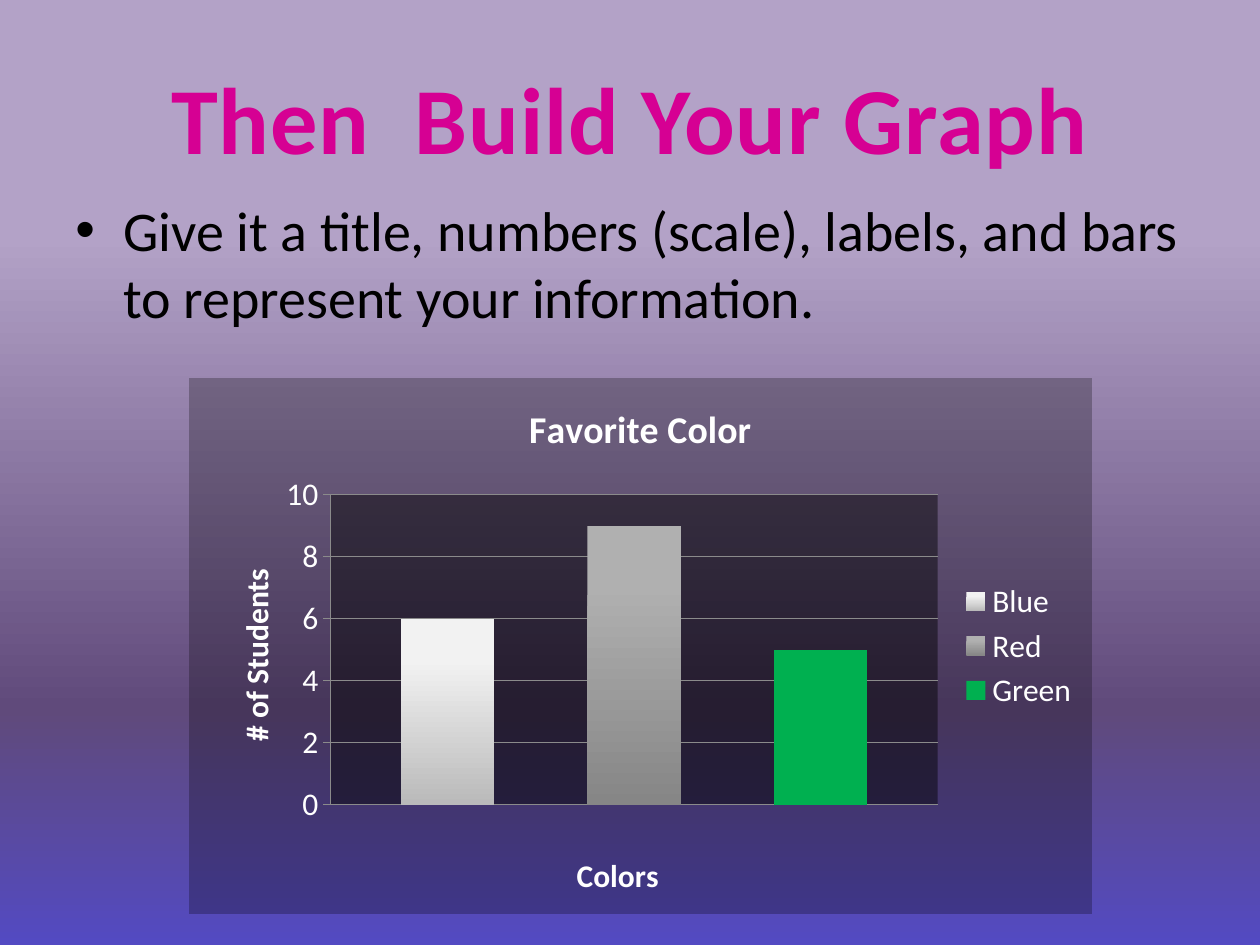
from dataclasses import dataclass

from lxml import etree
from pptx import Presentation
from pptx import util as u
from pptx.chart import data as chart_data
from pptx.dml import color, fill as dml_fill
from pptx.enum import chart as ce, text
from pptx.oxml import ns, parse_xml

PX = 914400 / 126
FONT = "Calibri"
COLORS = {
    "title": "D60093",
    "body": "000000",
    "panel": "000000",
    "label": "FFFFFF",
    "grid": "8B8B8B",
}


@dataclass(frozen=True)
class Box:
    x: int
    y: int
    w: int = 0
    h: int = 0

    def emu(self) -> list[int]:
        return [round(v * PX) for v in (self.x, self.y, self.w, self.h)]


@dataclass(frozen=True)
class Bar:
    name: str
    value: int
    stops: tuple[tuple[int, str], ...]


SKY = ((0, "B3A2C7"), (25, "B3A2C7"), (75, "604A7B"), (100, "534AC2"))
BARS = [
    Bar("Blue", 6, ((0, "F2F2F2"), (25, "F0F0F0"), (100, "BABABA"))),
    Bar("Red", 9, ((0, "B0B0B0"), (25, "AEAEAE"), (100, "868686"))),
    Bar("Green", 5, ((0, "00B050"),)),
]
TITLE = Box(63, 38, 1134, 158)
BODY = Box(63, 189, 1134, 655)
CHART = Box(189, 378, 903, 536)
PLOT = Box(331, 495, 607, 310)
VALUE_TITLE = Box(229, 563)
CATEGORY_TITLE = Box(571, 848)


def rgb(value: str) -> color.RGBColor:
    return color.RGBColor.from_string(value)


def style(font, size: float, value: str, bold: bool = False) -> None:
    font.name, font.size, font.bold = FONT, u.Pt(size), bold
    font.color.rgb = rgb(value)


def paint(fill: dml_fill.FillFormat, holder, stops) -> None:
    if len(stops) == 1:
        fill.solid()
        fill.fore_color.rgb = rgb(stops[0][1])
        return
    fill.gradient()
    fill.gradient_angle = 270
    gradient = holder.find(".//" + ns.qn("a:gsLst"))
    for old in list(gradient):
        gradient.remove(old)
    for position, value in stops:
        stop = etree.SubElement(gradient, ns.qn("a:gs"), pos=str(position * 1000))
        etree.SubElement(stop, ns.qn("a:srgbClr"), val=value)


def panel(opacity: int):
    return parse_xml(
        f'<c:spPr {ns.nsdecls("c", "a")}><a:solidFill><a:srgbClr val="{COLORS["panel"]}">'
        f'<a:alpha val="{opacity * 1000}"/></a:srgbClr></a:solidFill>'
        "<a:ln><a:noFill/></a:ln></c:spPr>"
    )


def place(parent, box: Box, index: int) -> None:
    old = parent.find(ns.qn("c:layout"))
    if old is not None:
        parent.remove(old)
    layout = etree.Element(ns.qn("c:layout"))
    manual = etree.SubElement(layout, ns.qn("c:manualLayout"))
    values = {"xMode": "edge", "yMode": "edge"}
    if box.w:
        values = {"layoutTarget": "inner", **values}
    values["x"] = f"{(box.x - CHART.x) / CHART.w:.3f}"
    values["y"] = f"{(box.y - CHART.y) / CHART.h:.3f}"
    if box.w:
        values["w"] = f"{box.w / CHART.w:.3f}"
        values["h"] = f"{box.h / CHART.h:.3f}"
    for tag, value in values.items():
        etree.SubElement(manual, ns.qn(f"c:{tag}"), val=value)
    parent.insert(index, layout)


def label(owner, caption: str, size: float) -> None:
    owner.has_title = True
    tf = (owner.chart_title if hasattr(owner, "chart_title") else owner.axis_title).text_frame
    tf.text = caption
    style(tf.paragraphs[0].runs[0].font, size, COLORS["label"], True)


def add_title(s) -> None:
    sp = s.shapes.title
    sp.left, sp.top, sp.width, sp.height = TITLE.emu()
    tf = sp.text_frame
    tf.text = "Then  Build Your Graph"
    tf.vertical_anchor = text.MSO_ANCHOR.MIDDLE
    p = tf.paragraphs[0]
    p.alignment = text.PP_ALIGN.CENTER
    r = p.runs[0]
    style(r.font, 54, COLORS["title"], True)
    r.font._element.set("spc", "50")


def add_body(s) -> None:
    tf = s.shapes.add_textbox(*BODY.emu()).text_frame
    tf.word_wrap = True
    p = tf.paragraphs[0]
    p.text = "Give it a title, numbers (scale), labels, and bars to represent your information."
    p.space_before = u.Pt(3)
    style(p.runs[0].font, 32, COLORS["body"])
    properties = p._p.get_or_add_pPr()
    indent = u.Inches(0.38)
    properties.set("marL", str(indent))
    properties.set("indent", str(-indent))
    etree.SubElement(properties, ns.qn("a:buFont"), typeface="Arial")
    etree.SubElement(properties, ns.qn("a:buChar"), char="•")


def add_graph(s) -> None:
    data = chart_data.CategoryChartData()
    data.categories = ["1"]
    for bar in BARS:
        data.add_series(bar.name, [bar.value])
    chart = s.shapes.add_chart(ce.XL_CHART_TYPE.COLUMN_CLUSTERED, *CHART.emu(), data).chart
    style(chart.font, 18, COLORS["label"])
    label(chart, "Favorite Color", 21.6)

    chart.has_legend = True
    chart.legend.position = ce.XL_LEGEND_POSITION.RIGHT
    chart.legend.include_in_layout = False
    style(chart.legend.font, 18, COLORS["label"])

    plot = chart.plots[0]
    plot.vary_by_categories = False
    plot.overlap, plot.gap_width = -100, 150
    root = chart.element
    for bar, series, node in zip(BARS, plot.series, root.iter(ns.qn("c:ser"))):
        paint(series.format.fill, node, bar.stops)

    axis = chart.value_axis
    axis.minimum_scale, axis.maximum_scale, axis.major_unit = 0, 10, 2
    axis.major_tick_mark = ce.XL_TICK_MARK.CROSS
    axis.has_major_gridlines = True
    for line in (axis.format.line, axis.major_gridlines.format.line):
        line.color.rgb = rgb(COLORS["grid"])
        line.width = u.Pt(0.75)
    label(axis, "# of Students", 18)
    label(chart.category_axis, "Colors", 18)
    chart.category_axis.visible = False

    place(axis.axis_title._element, VALUE_TITLE, 1)
    place(chart.category_axis.axis_title._element, CATEGORY_TITLE, 1)
    area = root.find(".//" + ns.qn("c:plotArea"))
    place(area, PLOT, 0)
    area.append(panel(46))
    root.find(ns.qn("c:chart")).addnext(panel(26))


def main() -> None:
    prs = Presentation()
    prs.slide_width, prs.slide_height = u.Inches(10), u.Inches(7.5)
    s = prs.slides.add_slide(prs.slide_layouts[5])
    paint(s.background.fill, s.element, SKY)
    add_title(s)
    add_body(s)
    add_graph(s)
    prs.save("out.pptx")


if __name__ == "__main__":
    main()
